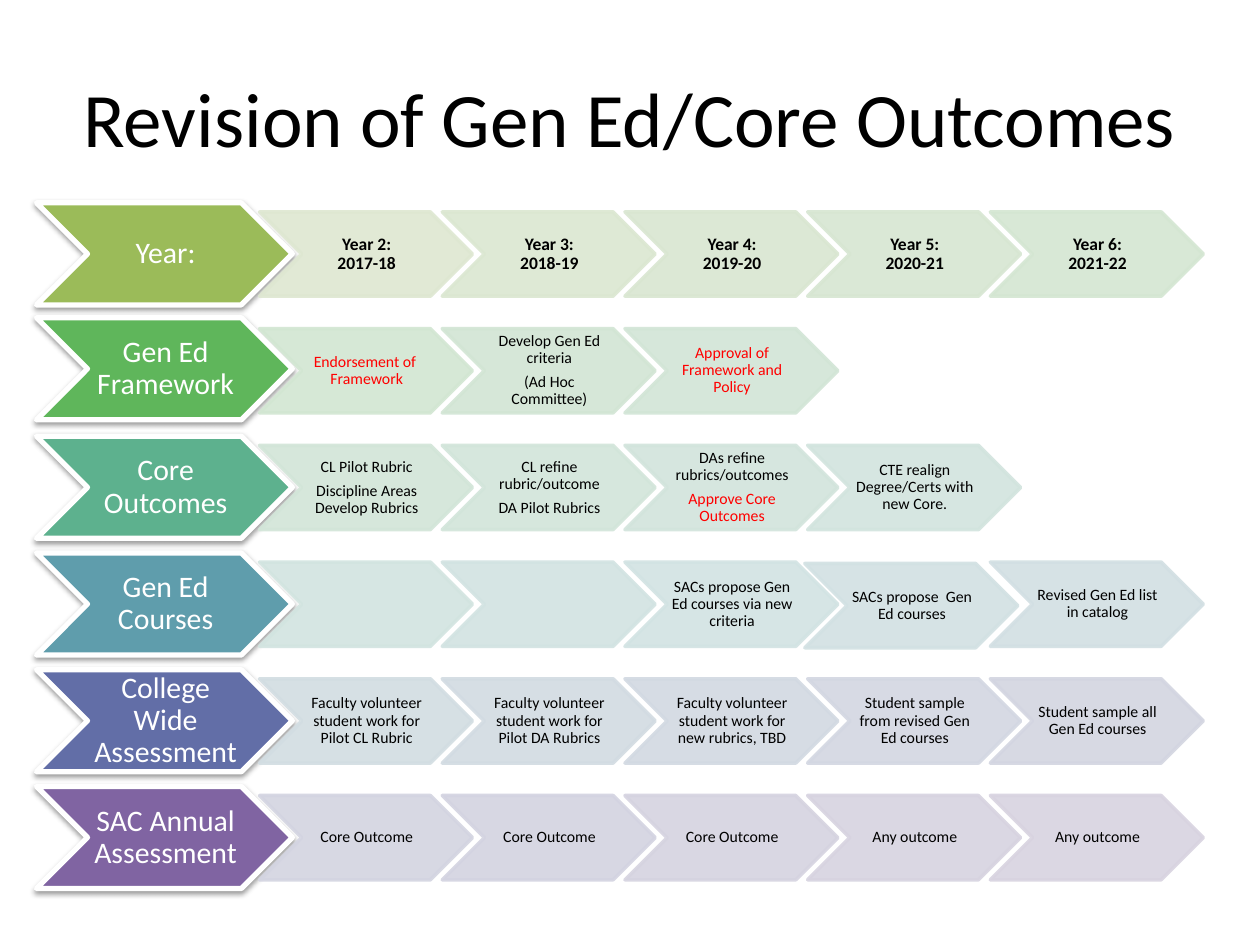
from dataclasses import dataclass

from lxml import etree
from pptx import Presentation
from pptx.dml.color import RGBColor
from pptx.enum import shapes, text as txt
from pptx.oxml import ns
from pptx.util import Pt

BLACK = RGBColor(0, 0, 0)
WHITE = RGBColor(255, 255, 255)
RED = RGBColor(255, 0, 0)
GREEN = RGBColor(0x9B, 0xBB, 0x59)
LEAF = RGBColor(0x5F, 0xB6, 0x5B)
JADE = RGBColor(0x5D, 0xB1, 0x8E)
TEAL = RGBColor(0x5F, 0x9D, 0xAC)
BLUE = RGBColor(0x62, 0x6E, 0xA7)
PLUM = RGBColor(0x80, 0x64, 0xA2)
# Pale step colours, running on from row to row
TINTS = [RGBColor.from_string(code) for code in (
    "DEE7D1 DBE7D1 D9E6D1 D7E6D2 D4E6D2 "
    "D2E6D2 D2E5D4 D2E5D6 "
    "D2E5D8 D2E5DA D2E4DC D2E4DE "
    "D2E4E0 D2E3E2 D2E3E3 D2E1E3 D2DFE3 "
    "D2DDE2 D2DBE2 D2D9E2 D3D7E2 D3D5E1 "
    "D3D4E1 D3D3E1 D5D3E0 D7D3E0 D8D3E0").split()]

FONT = "Calibri"
PITCH = 66.7                # from row to row
STEP = 104.4                # from step to step
HEAD = (20.9, 115.9, 146.2, 58.3)
CELL = (148.3, 121.1, 121.7, 48.2)


@dataclass
class Step:
    black: str = ""
    red: str = ""
    dx: float = 0
    dy: float = 0


@dataclass
class Row:
    name: str
    color: RGBColor
    steps: list[Step]
    size: float = 9
    bold: bool = False
    dy: float = 0           # shift of the heading


ROWS = [
    Row("Year:", GREEN, [
        Step("Year 2:\v2017-18"), Step("Year 3:\v2018-19"),
        Step("Year 4:\v2019-20"), Step("Year 5:\v2020-21"),
        Step("Year 6:\v2021-22")], size=10, bold=True),
    Row("Gen Ed Framework", LEAF, [
        Step(red="Endorsement of  Framework"),
        Step("Develop Gen Ed criteria\n(Ad Hoc Committee)"),
        Step(red="Approval of Framework and Policy")], dy=-1),
    Row("Core Outcomes", JADE, [
        Step("CL Pilot Rubric\nDiscipline Areas Develop Rubrics"),
        Step("CL refine rubric/outcome\nDA Pilot Rubrics"),
        Step("DAs refine rubrics/outcomes", "Approve Core Outcomes"),
        Step("CTE realign Degree/Certs with new Core.")]),
    Row("Gen Ed Courses", TEAL, [
        Step(), Step(),
        Step("SACs propose Gen Ed courses via new criteria"),
        Step("SACs propose  Gen Ed courses", dx=-1.6, dy=0.8),
        Step("Revised Gen Ed list in catalog")]),
    Row("College Wide Assessment", BLUE, [
        Step("Faculty volunteer student work for Pilot CL Rubric"),
        Step("Faculty volunteer student work for Pilot DA Rubrics"),
        Step("Faculty volunteer student work for new rubrics, TBD"),
        Step("Student sample from revised Gen Ed courses"),
        Step("Student sample all Gen Ed courses")]),
    Row("SAC Annual Assessment", PLUM, [
        Step("Core Outcome"), Step("Core Outcome"), Step("Core Outcome"),
        Step("Any outcome"), Step("Any outcome")]),
]


def write(frame, text: str, *, size: float, color=BLACK, bold=False,
          space=0.9, after=0.43) -> None:
    """Add one centred paragraph per line of text."""
    for line in text.splitlines() if "\v" not in text else [text]:
        first = frame.paragraphs[0]
        para = frame.add_paragraph() if first.text else first
        para.text = line
        para.alignment = txt.PP_ALIGN.CENTER
        para.line_spacing = space
        para.space_after = Pt(round(after * size, 1))
        for run in para.runs:
            font = run.font
            font.name, font.size, font.bold = FONT, Pt(size), bold
            font.color.rgb = color


def fade(fill, share: int) -> None:
    """Set the opacity of a solid fill, in percent."""
    for tone in fill.iter(ns.qn("a:srgbClr")):
        etree.SubElement(tone, ns.qn("a:alpha"), val=str(share * 1000))


def arrow(slide, box: tuple, fill: RGBColor, edge: RGBColor,
          width: float, inset: float):
    """Draw a chevron that is ready to take text."""
    shape = slide.shapes.add_shape(
        shapes.MSO_SHAPE.CHEVRON, *(Pt(round(n, 2)) for n in box))
    shape.shadow.inherit = False
    shape.fill.solid()
    shape.fill.fore_color.rgb = fill
    shape.line.color.rgb = edge
    shape.line.width = Pt(width)
    frame = shape.text_frame
    frame.word_wrap = True
    frame.vertical_anchor = txt.MSO_ANCHOR.MIDDLE
    frame.margin_left = Pt(inset)
    frame.margin_right = 0
    frame.margin_top = frame.margin_bottom = Pt(0.7)
    return shape


def shade(shape) -> None:
    """Give a shape a soft shadow straight below it."""
    effect = shape.element.spPr.find(ns.qn("a:effectLst"))
    outer = etree.SubElement(
        effect, ns.qn("a:outerShdw"), blurRad=str(Pt(3.1)),
        dist=str(Pt(1.6)), dir="5400000", rotWithShape="0")
    tone = etree.SubElement(outer, ns.qn("a:srgbClr"), val=str(BLACK))
    etree.SubElement(tone, ns.qn("a:alpha"), val="38000")


def draw_head(slide, row: Row, down: float) -> None:
    left, top, width, height = HEAD
    shape = arrow(slide, (left, top + down + row.dy, width, height),
                  row.color, WHITE, 3, 1.4)
    shade(shape)
    write(shape.text_frame, row.name, size=17, color=WHITE)


def draw_step(slide, row: Row, step: Step, tint: RGBColor,
              along: float, down: float) -> None:
    left, top, width, height = CELL
    box = (left + along + step.dx, top + down + step.dy, width, height)
    shape = arrow(slide, box, tint, tint, 2, 0.7)
    fade(shape.element.spPr, 90)
    for words, color in ((step.black, BLACK), (step.red, RED)):
        write(shape.text_frame, words, size=row.size, color=color,
              bold=row.bold)


def main() -> None:
    deck = Presentation()
    deck.slide_width, deck.slide_height = Pt(720), Pt(540)
    slide = deck.slides.add_slide(deck.slide_layouts[5])

    # Title
    title = slide.shapes.title
    title.left, title.top = Pt(36), Pt(21.6)
    title.width, title.height = Pt(648), Pt(90)
    title.text_frame.vertical_anchor = txt.MSO_ANCHOR.MIDDLE
    write(title.text_frame, "Revision of Gen Ed/Core Outcomes", size=44,
          space=1.0, after=0)

    # Rows of chevrons
    tints = iter(TINTS)
    for i, row in enumerate(ROWS):
        draw_head(slide, row, i * PITCH)
        for j, step in enumerate(row.steps):
            draw_step(slide, row, step, next(tints), j * STEP, i * PITCH)

    deck.save("out.pptx")


if __name__ == "__main__":
    main()
